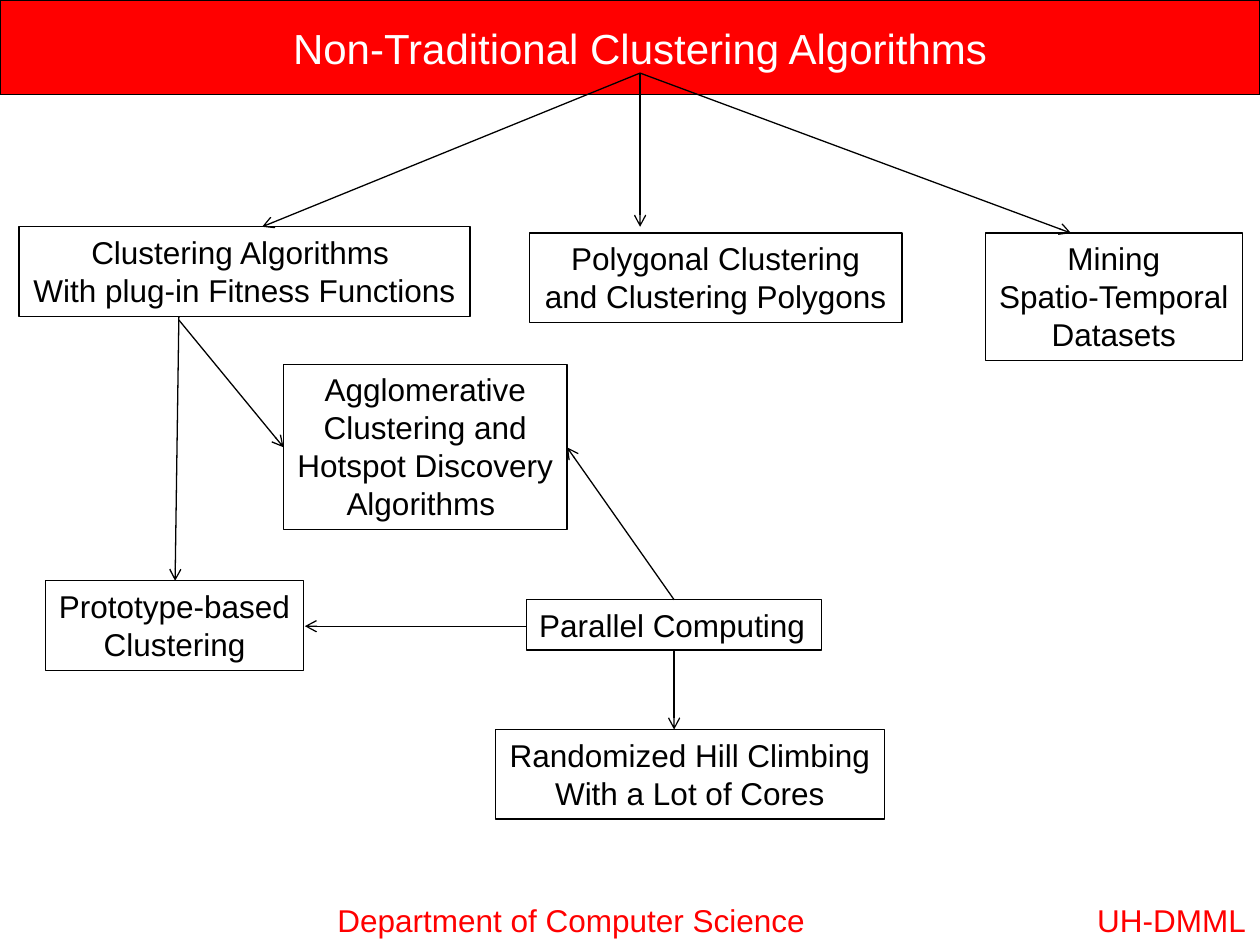
from dataclasses import dataclass

from lxml import etree
from pptx import Presentation
from pptx.dml.color import RGBColor
from pptx.enum.shapes import MSO_CONNECTOR, MSO_SHAPE
from pptx.enum.text import MSO_ANCHOR, MSO_AUTO_SIZE, PP_ALIGN
from pptx.oxml.ns import qn
from pptx.util import Inches, Pt

RECTANGLE = MSO_SHAPE.RECTANGLE
STRAIGHT = MSO_CONNECTOR.STRAIGHT
TOP, MIDDLE = MSO_ANCHOR.TOP, MSO_ANCHOR.MIDDLE
GROW, FIXED = MSO_AUTO_SIZE.SHAPE_TO_FIT_TEXT, MSO_AUTO_SIZE.NONE
LEFT, CENTER = PP_ALIGN.LEFT, PP_ALIGN.CENTER
TITLE_ONLY = 5


@dataclass(frozen=True)
class Theme:
    font: str = "Arial"
    red: RGBColor = RGBColor(0xFF, 0x00, 0x00)
    black: RGBColor = RGBColor(0x00, 0x00, 0x00)
    white: RGBColor = RGBColor(0xFF, 0xFF, 0xFF)
    title_size: Pt = Pt(24)
    body_size: Pt = Pt(18)
    line_width: Pt = Pt(0.75)


THEME = Theme()

BAND = (0, 0, 10, 0.75)
TITLE_BOX = (0.58, 0, 9, 0.75)

TOPICS = [
    (("Clustering Algorithms ", "With plug-in Fitness Functions"), (0.15, 1.8, 3.58, 0.71), CENTER),
    (("Polygonal Clustering", "and Clustering Polygons"), (4.2, 1.85, 2.96, 0.71), CENTER),
    (("Mining", "Spatio-Temporal", "Datasets"), (7.82, 1.85, 2.04, 1.01), CENTER),
    (("Agglomerative", "Clustering and", "Hotspot Discovery", "Algorithms "),
     (2.25, 2.89, 2.25, 1.31), CENTER),
    (("Prototype-based", "Clustering"), (0.36, 4.61, 2.05, 0.71), CENTER),
    (("Parallel Computing",), (4.18, 4.76, 2.34, 0.4), LEFT),
    (("Randomized Hill Climbing", "With a Lot of Cores"), (3.93, 5.79, 3.09, 0.71), CENTER),
]

TITLE_POINT = (5.08, 0.58)
ARROWS = [
    (TITLE_POINT, (2.08, 1.8)),
    (TITLE_POINT, (5.08, 1.8)),
    (TITLE_POINT, (8.5, 1.85)),
    ((1.42, 2.51), (1.39, 4.61)),
    ((1.42, 2.54), (2.25, 3.55)),
    ((4.18, 4.97), (2.42, 4.97)),
    ((5.35, 4.76), (4.5, 3.55)),
    ((5.35, 5.17), (5.35, 5.79)),
]

FOOTERS = [
    ("Department of Computer Science", (2.58, 7.1, 3.95, 0.4)),
    ("UH-DMML", (8.61, 7.1, 1.39, 0.4)),
]


def inches(values):
    return [Inches(value) for value in values]


def apply(target, formats):
    for name, value in formats.items():
        setattr(target, name, value)


def write_lines(shape, lines, size, color, align, frame_formats):
    frame = shape.text_frame
    frame.text = "\n".join(lines)
    apply(frame, frame_formats)
    for para in frame.paragraphs:
        para.alignment = align
        for span in para.runs:
            apply(span.font, {"name": THEME.font, "size": size})
            span.font.color.rgb = color


def outline(shape):
    shape.line.color.rgb = THEME.black
    shape.line.width = THEME.line_width


def add_rectangle(page, box):
    shape = page.shapes.add_shape(RECTANGLE, *inches(box))
    shape.shadow.inherit = False
    outline(shape)
    return shape


def add_header(page, band_box, title_box, text):
    band = add_rectangle(page, band_box)
    band.fill.solid()
    band.fill.fore_color.rgb = THEME.red
    title = page.shapes.title
    title.element.addprevious(band.element)
    apply(title, dict(zip(("left", "top", "width", "height"), inches(title_box))))
    write_lines(title, [text], THEME.title_size, THEME.white, CENTER,
                {"word_wrap": True, "auto_size": FIXED, "vertical_anchor": MIDDLE})


def add_topic(page, lines, box, align):
    shape = add_rectangle(page, box)
    shape.fill.background()
    write_lines(shape, lines, THEME.body_size, THEME.black, align,
                {"word_wrap": False, "auto_size": GROW, "vertical_anchor": TOP})


def add_arrow(page, start, end):
    arrow = page.shapes.add_connector(STRAIGHT, *inches(start + end))
    outline(arrow)
    etree.SubElement(arrow.line._get_or_add_ln(), qn("a:tailEnd"), type="arrow")
    etree.SubElement(arrow.element.spPr, qn("a:effectLst"))


def add_footer(page, text, box):
    label = page.shapes.add_textbox(*inches(box))
    write_lines(label, [text], THEME.body_size, THEME.red, LEFT,
                {"word_wrap": False, "auto_size": GROW, "vertical_anchor": TOP})


def main():
    deck = Presentation()
    deck.slide_width, deck.slide_height = inches((10, 7.5))
    page = deck.slides.add_slide(deck.slide_layouts[TITLE_ONLY])
    add_header(page, BAND, TITLE_BOX, "Non-Traditional Clustering Algorithms")
    for lines, box, align in TOPICS:
        add_topic(page, lines, box, align)
    for start, end in ARROWS:
        add_arrow(page, start, end)
    for text, box in FOOTERS:
        add_footer(page, text, box)
    deck.save("out.pptx")


if __name__ == "__main__":
    main()
